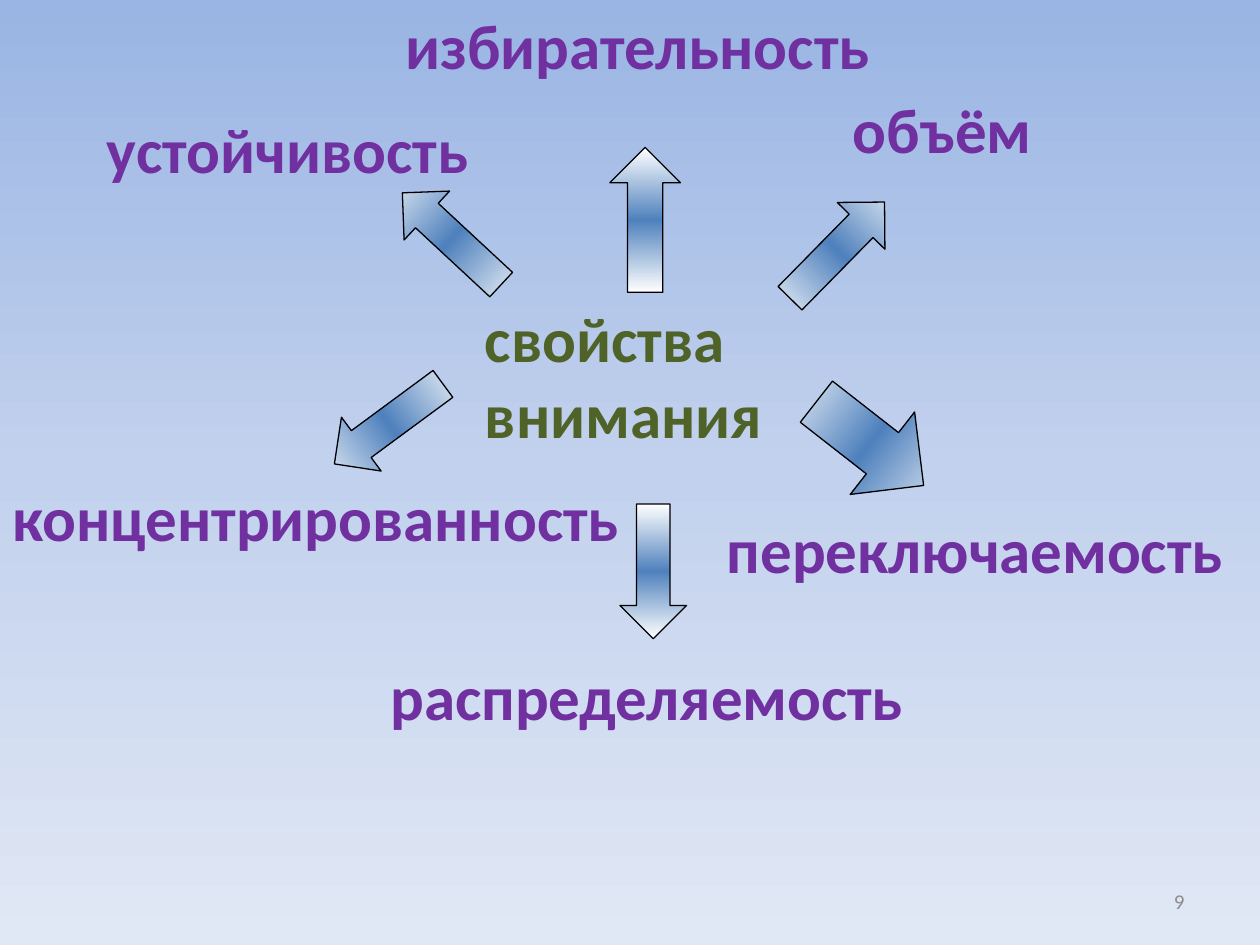
import copy

import pptx
import pptx.dml.color
import pptx.enum.shapes
import pptx.enum.text
import pptx.util

Inches = pptx.util.Inches
RGBColor = pptx.dml.color.RGBColor

PURPLE = RGBColor(0x70, 0x30, 0xA0)
OLIVE = RGBColor(0x4F, 0x62, 0x28)
GRAY = RGBColor(0x8C, 0x8C, 0x8C)
BLACK = RGBColor(0, 0, 0)
WHITE = RGBColor(0xFF, 0xFF, 0xFF)
BLUE = RGBColor(0x4F, 0x81, 0xBD)
SKY_TOP = RGBColor(0x9A, 0xB5, 0xE4)
SKY_MIDDLE = RGBColor(0xC2, 0xD1, 0xED)
SKY_BOTTOM = RGBColor(0xE1, 0xE8, 0xF5)

PROPERTIES = [
    ("объём", 6.67, 0.67, 1.92),
    ("устойчивость", 0.75, 0.83, 3.58),
    ("переключаемость", 5.67, 4, 4.33),
    ("распределяемость", 3, 5.17, 5.75),
    ("концентрированность", 0, 3.75, 5.5),
    ("избирательность", 3.12, 0, 4.69),
]

ARROWS = [
    (6.49, 2.98, 0.83, 1.08, 308),
    (2.82, 2.83, 0.53, 1.07, 53.6),
    (6.38, 1.45, 0.53, 1.07, 224.5),
    (3.32, 1.36, 0.53, 1.07, 132.9),
    (4.92, 4, 0.53, 1.07, 0),
    (4.84, 1.17, 0.56, 1.15, 180),
]


def fill_downward(fill, colors):
    fill.gradient()
    fill.gradient_angle = 270
    first_stop = fill.gradient_stops[0]._gs
    first_stop.addnext(copy.deepcopy(first_stop))
    for stop, color, position in zip(fill.gradient_stops, colors, (0, 0.5, 1)):
        stop.color.rgb = color
        stop.position = position


def add_label(slide, text, left, top, width, height=0.71, color=PURPLE, size=36, bold=True):
    label = slide.shapes.add_textbox(Inches(left), Inches(top), Inches(width), Inches(height))
    label.text_frame.word_wrap = True
    paragraph = label.text_frame.paragraphs[0]
    paragraph.text = text
    paragraph.font.name = "Calibri"
    paragraph.font.size = pptx.util.Pt(size)
    paragraph.font.bold = bold
    paragraph.font.color.rgb = color
    return label


def add_arrow(slide, left, top, width, height, rotation):
    arrow = slide.shapes.add_shape(
        pptx.enum.shapes.MSO_SHAPE.DOWN_ARROW,
        Inches(left), Inches(top), Inches(width), Inches(height),
    )
    arrow.rotation = rotation
    arrow.shadow.inherit = False
    fill_downward(arrow.fill, (WHITE, BLUE, WHITE))
    arrow.line.color.rgb = BLACK
    arrow.line.width = pptx.util.Pt(0.75)


def add_page_number(slide, number):
    page = add_label(slide, number, 7.17, 6.95, 2.33, 0.4, GRAY, 12, False)
    page.text_frame.vertical_anchor = pptx.enum.text.MSO_ANCHOR.MIDDLE
    page.text_frame.paragraphs[0].alignment = pptx.enum.text.PP_ALIGN.RIGHT


def main():
    presentation = pptx.Presentation()
    presentation.slide_width = Inches(10)
    presentation.slide_height = Inches(7.5)
    slide = presentation.slides.add_slide(presentation.slide_layouts[6])
    fill_downward(slide.background.fill, (SKY_TOP, SKY_MIDDLE, SKY_BOTTOM))

    add_label(slide, "свойства внимания", 3.75, 2.33, 2.42, 1.31, OLIVE)
    for name, left, top, width in PROPERTIES:
        add_label(slide, name, left, top, width)
    for arrow in ARROWS:
        add_arrow(slide, *arrow)
    add_page_number(slide, "9")

    presentation.save("out.pptx")


if __name__ == "__main__":
    main()
